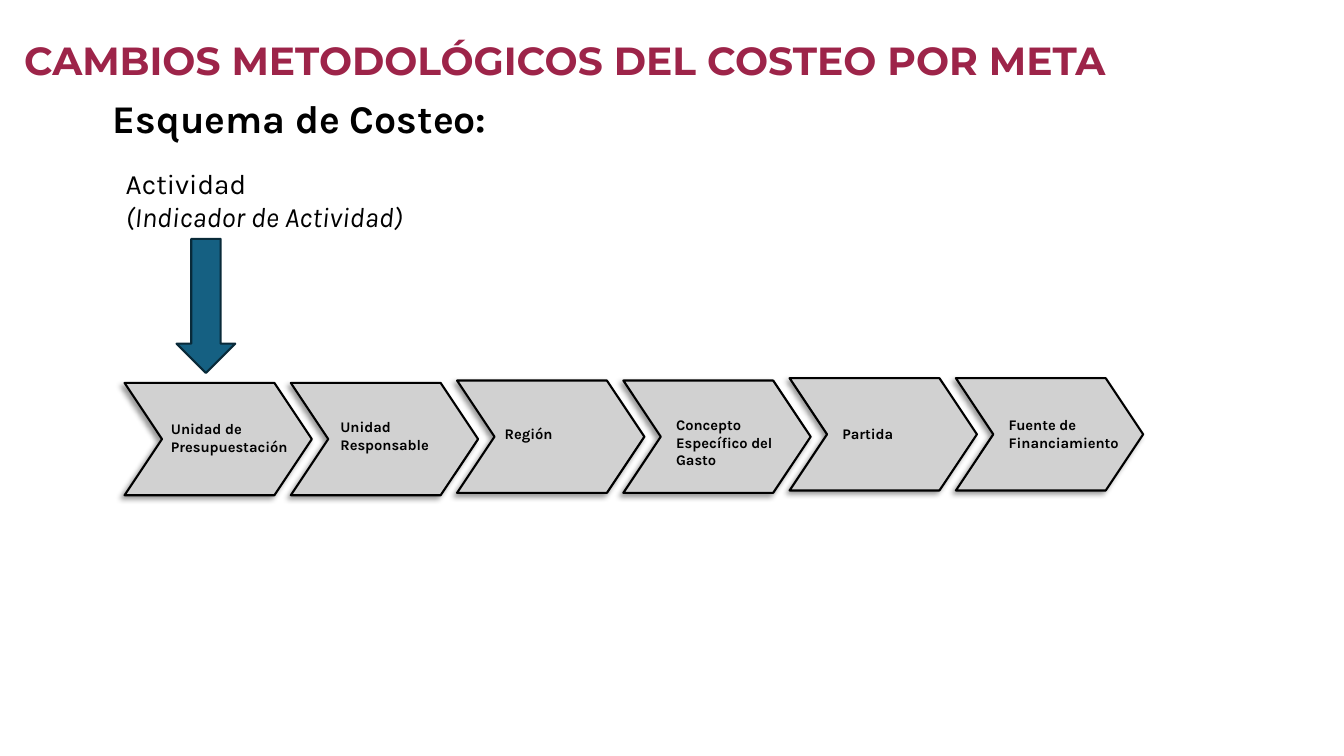
from dataclasses import dataclass
from lxml.etree import SubElement
from pptx import Presentation
from pptx.dml.color import RGBColor as RGB
from pptx.enum.shapes import MSO_SHAPE as SHAPE
from pptx.enum.text import MSO_ANCHOR as ANCHOR, MSO_AUTO_SIZE as AUTO, PP_ALIGN as ALIGN
from pptx.oxml.ns import qn
from pptx.util import Cm, Pt

TITLE = "CAMBIOS METODOLÓGICOS DEL COSTEO POR META"
SUBTITLE = "Esquema de Costeo:"
ACTIVITY = ["Actividad", "(Indicador de Actividad)"]
# label, text left, text top, line count
STEPS = [
    ("Unidad de Presupuestación", 4.06, 10.46, 2),
    ("Unidad Responsable", 8.33, 10.41, 2),
    ("Región", 12.47, 10.59, 1),
    ("Concepto Específico del Gasto", 16.79, 10.36, 3),
    ("Partida", 20.98, 10.59, 1),
    ("Fuente de Financiamiento", 25.17, 10.36, 2),
]


@dataclass(frozen=True)
class Theme:
    title_font: str = "Montserrat"
    body_font: str = "Karla"
    title: str = "9D2449"
    ink: str = "000000"
    step: str = "D1D1D1"
    arrow: str = "156082"
    arrow_line: str = "092A39"
    heading_size: float = 28
    activity_size: float = 20
    label_size: float = 10.5
    line: float = 1.5


T = Theme()


def style(p, size, name=T.body_font, color=T.ink, bold=True):
    p.alignment = ALIGN.LEFT
    for r in p.runs:
        f = r.font
        f.name, f.size, f.bold = name, Pt(size), bold
        f.color.rgb = RGB.from_string(color)


def add_text(s, box, lines, size, bold=True):
    tf = s.shapes.add_textbox(*map(Cm, box)).text_frame
    tf.word_wrap = True
    tf.auto_size = AUTO.SHAPE_TO_FIT_TEXT
    tf.text = "\n".join(lines)
    for p in tf.paragraphs:
        style(p, size, bold=bold)
    return tf


def add_shape(s, kind, box, fill, line):
    sp = s.shapes.add_shape(kind, *map(Cm, box))
    sp.shadow.inherit = False
    sp.fill.solid()
    sp.fill.fore_color.rgb = RGB.from_string(fill)
    sp.line.color.rgb = RGB.from_string(line)
    sp.line.width = Pt(T.line)
    return sp


def add_shadow(sp):
    effects = sp._element.spPr.find(qn("a:effectLst"))
    shadow = SubElement(effects, qn("a:outerShdw"), blurRad=str(Pt(4)),
                        dist=str(Pt(3)), dir=str(135 * 60000), rotWithShape="0")
    color = SubElement(shadow, qn("a:srgbClr"), val=T.ink)
    SubElement(color, qn("a:alpha"), val="40000")


def add_title(s):
    sp = s.shapes.title
    sp.left, sp.top, sp.width, sp.height = map(Cm, (0.48, 0.79, 32.41, 1.45))
    tf = sp.text_frame
    tf.text = TITLE
    tf.word_wrap = True
    tf.auto_size = AUTO.NONE
    tf.vertical_anchor = ANCHOR.TOP
    tf.margin_left = tf.margin_right = tf.margin_top = tf.margin_bottom = Cm(0.13)
    style(tf.paragraphs[0], T.heading_size, T.title_font, T.title)


def main():
    prs = Presentation()
    prs.slide_width, prs.slide_height = Cm(33.87), Cm(19.05)
    s = prs.slides.add_slide(prs.slide_layouts[5])
    add_title(s)
    add_text(s, (2.59, 2.24, 26.31, 1.45), [SUBTITLE], T.heading_size)

    for i in range(len(STEPS)):
        box = (3.14 + 4.19 * i, 9.65 - 0.06 * (i // 2), 4.72, 2.83)
        sp = add_shape(s, SHAPE.CHEVRON, box, T.step, T.ink)
        sp.adjustments[0] = 1 / 3
        add_shadow(sp)
    for label, left, top, count in STEPS:
        add_text(s, (left, top, 3.73, 0.26 + 0.45 * count), [label], T.label_size)

    tf = add_text(s, (2.92, 4.06, 13.31, 1.96), ACTIVITY, T.activity_size, bold=False)
    tf.paragraphs[1].runs[0].font.italic = True
    add_shape(s, SHAPE.DOWN_ARROW, (4.45, 6.02, 1.48, 3.38), T.arrow, T.arrow_line)
    prs.save("out.pptx")


if __name__ == "__main__":
    main()
